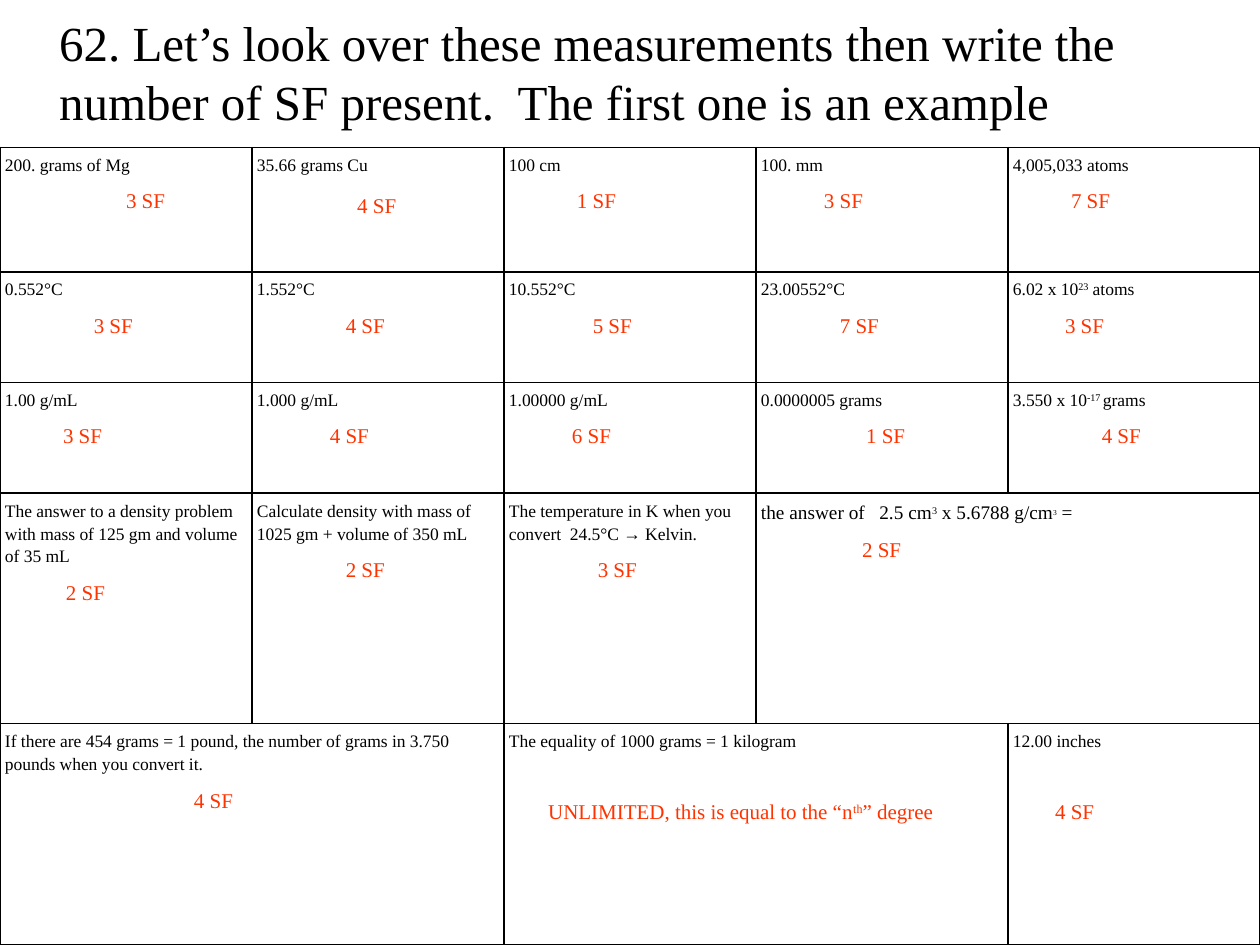
from dataclasses import dataclass

from lxml.etree import fromstring
from pptx import Presentation
from pptx.dml.color import RGBColor
from pptx.enum.text import MSO_ANCHOR, MSO_AUTO_SIZE, PP_ALIGN
from pptx.oxml.ns import nsdecls
from pptx.util import Cm, Pt

FONT = "Times New Roman"
BLACK = "000000"
RED = "FF3300"
COLUMN_WIDTH = 5.08
ROW_HEIGHTS = (2.51, 2.23, 2.23, 4.65, 4.46)


@dataclass
class Item:
    """One measurement with its answer, indented in centimetres."""
    question: str
    answer: str
    indent: float
    span: int = 1
    gap: float = 0
    size: float = 10
    raised_sizes: tuple = ()


ROWS = (
    (
        Item("200. grams of Mg", "3 SF", 2.44),
        Item("35.66 grams Cu", "4 SF", 2.02, gap=2.7),
        Item("100 cm", "1 SF", 1.37),
        Item("100. mm", "3 SF", 1.27),
        Item("4,005,033 atoms", "7 SF", 1.17),
    ),
    (
        Item("0.552°C", "3 SF", 1.79),
        Item("1.552°C", "4 SF", 1.79),
        Item("10.552°C", "5 SF", 1.69),
        Item("23.00552°C", "7 SF", 1.59),
        Item("6.02 x 10^23^ atoms", "3 SF", 1.05),
    ),
    (
        Item("1.00 g/mL", "3 SF", 1.17),
        Item("1.000 g/mL", "4 SF", 1.47),
        Item("1.00000 g/mL", "6 SF", 1.27),
        Item("0.0000005 grams", "1 SF", 2.12),
        Item("3.550 x 10^-17 ^grams", "4 SF", 1.79),
    ),
    (
        Item("The answer to a density problem with mass of 125 gm and volume of 35 mL",
             "2 SF", 1.23),
        Item("Calculate density with mass of 1025 gm + volume of 350 mL", "2 SF", 1.79),
        Item("The temperature in K when you convert  24.5°C → Kelvin.", "3 SF", 1.79),
        Item("the answer of   2.5 cm^3^ x 5.6788 g/cm^3^ =", "2 SF", 2.04,
             span=2, size=11, raised_sizes=(10, 7.3)),
    ),
    (
        Item("If there are 454 grams = 1 pound, the number of grams in 3.750 pounds "
             "when you convert it.", "4 SF", 3.81, span=2),
        Item("The equality of 1000 grams = 1 kilogram",
             "UNLIMITED, this is equal to the “n^th^” degree", 0.79, span=2, gap=19.7),
        Item("12.00 inches", "4 SF", 0.85, gap=19.7),
    ),
)


def rgb(value):
    """Turn a hex string into a colour."""
    return RGBColor.from_string(value)


def write(para, text, size=10, color=BLACK, raised_sizes=()):
    """Fill a paragraph; text between carets is superscript."""
    for index, part in enumerate(text.split("^")):
        raised = index % 2 == 1
        span = para.add_run()
        span.text = part
        span.font.name = FONT
        span.font.color.rgb = rgb(color)
        span.font.size = Pt(raised_sizes[index // 2] if raised and raised_sizes else size)
        if raised:
            span.font._element.set("baseline", "30000")


def format_cell(cell):
    """Give a cell thin margins, no fill and a black border."""
    cell.margin_left = cell.margin_right = Cm(0.1)
    cell.margin_top = cell.margin_bottom = Cm(0.1)
    cell.fill.background()
    properties = cell._tc.get_or_add_tcPr()
    for index, side in enumerate("LRTB"):
        properties.insert(index, fromstring(
            f'<a:ln{side} {nsdecls("a")} w="12700"><a:solidFill>'
            f'<a:srgbClr val="{BLACK}"/></a:solidFill></a:ln{side}>'))


def fill_cell(cell, item):
    """Write the measurement and, below it, the indented answer."""
    frame = cell.text_frame
    question, answer = frame.paragraphs[0], frame.add_paragraph()
    for para in (question, answer):
        para.line_spacing = 1.19
        para.space_after = Pt(6)
    answer.space_before = Pt(item.gap)
    answer._p.get_or_add_pPr().set("marL", str(Cm(item.indent)))
    write(question, item.question, item.size, raised_sizes=item.raised_sizes)
    write(answer, item.answer, 12, RED)


def add_title(page, text):
    """Place the title at the top left."""
    box = page.shapes.title
    box.left, box.top, box.width, box.height = Cm(0.94), Cm(0.13), Cm(23.29), Cm(3.43)
    frame = box.text_frame
    frame.word_wrap = True
    frame.auto_size = MSO_AUTO_SIZE.NONE
    frame.vertical_anchor = MSO_ANCHOR.TOP
    para = frame.paragraphs[0]
    para.alignment = PP_ALIGN.LEFT
    write(para, text, 28)


def add_measurements(page, rows):
    """Add the table of measurements."""
    table = page.shapes.add_table(
        len(rows), 5, Cm(0), Cm(2.97), Cm(5 * COLUMN_WIDTH), Cm(sum(ROW_HEIGHTS))).table
    table.first_row = table.horz_banding = False
    for row, height in zip(table.rows, ROW_HEIGHTS):
        row.height = Cm(height)
    for cell in table.iter_cells():
        format_cell(cell)
    for row_index, items in enumerate(rows):
        column = 0
        for item in items:
            cell = table.cell(row_index, column)
            if item.span > 1:
                cell.merge(table.cell(row_index, column + item.span - 1))
            fill_cell(cell, item)
            column += item.span


def main():
    """Build and save the deck."""
    deck = Presentation()
    deck.slide_width, deck.slide_height = Cm(25.4), Cm(19.05)
    page = deck.slides.add_slide(deck.slide_layouts[5])
    add_title(page, "62. Let’s look over these measurements then write the "
                    "number of SF present.  The first one is an example")
    add_measurements(page, ROWS)
    deck.save("out.pptx")


if __name__ == "__main__":
    main()
